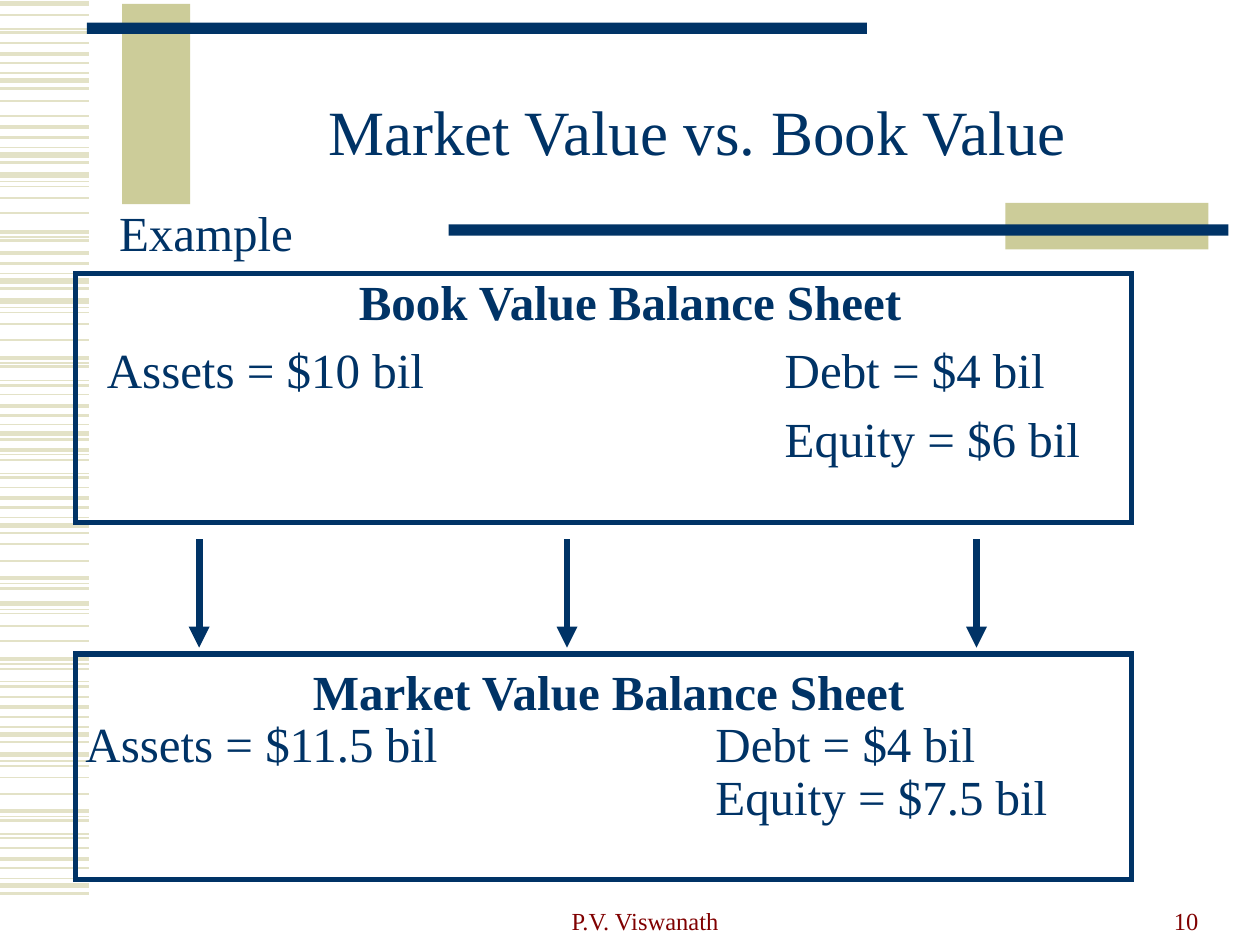
from lxml.etree import SubElement
from pptx import Presentation
from pptx.dml.color import RGBColor
from pptx.enum.shapes import MSO_CONNECTOR, MSO_SHAPE
from pptx.enum.text import MSO_ANCHOR, PP_ALIGN
from pptx.oxml.ns import qn
from pptx.util import Pt

PX = 9144  # EMU per px, 100 px to the inch

THEME = {
    "font": "Times New Roman",
    "navy": RGBColor.from_string("003366"),
    "khaki": RGBColor.from_string("CCCC99"),
    "stripe": RGBColor.from_string("E3E2C7"),
    "maroon": RGBColor.from_string("800000"),
    "title": Pt(36),
    "body": Pt(28),
    "footer": Pt(14),
}

deck = Presentation()
deck.slide_width, deck.slide_height = 1000 * PX, 750 * PX
page = deck.slides.add_slide(deck.slide_layouts[6])


def draw_line(x1, y1, x2, y2, color, weight):
    line = page.shapes.add_connector(
        MSO_CONNECTOR.STRAIGHT, x1 * PX, y1 * PX, x2 * PX, y2 * PX)
    line.line.color.rgb = THEME[color]
    line.line.width = Pt(weight)
    SubElement(line._element.spPr, qn("a:effectLst"))
    return line


def add_text(area, lines, size, color, anchor=MSO_ANCHOR.TOP, **spacing):
    """Add a text box with tabs every 100 px; each line is (text, alignment, bold)."""
    box = page.shapes.add_textbox(*(length * PX for length in area))
    frame = box.text_frame
    frame.word_wrap = True
    frame.vertical_anchor = anchor
    for index, (text, alignment, bold) in enumerate(lines):
        para = frame.add_paragraph() if index else frame.paragraphs[0]
        for name, value in {"alignment": alignment, **spacing}.items():
            setattr(para, name, value)
        para._p.get_or_add_pPr().set("defTabSz", str(100 * PX))
        span = para.add_run()
        span.text = text
        font_format = {"name": THEME["font"], "size": THEME[size], "bold": bold}
        for name, value in font_format.items():
            setattr(span.font, name, value)
        span.font.color.rgb = THEME[color]
    return box


# Stripes down the left edge: heights by line weight
stripes = {
    0.75: [23, 58, 117, 144, 188, 217, 244, 288, 302, 337, 361, 376, 411, 463,
           484, 527, 541, 577, 604, 648, 662, 697],
    1: [34, 80, 92, 148, 157, 169, 248, 257, 270, 313, 387, 432, 445, 487, 497,
        509, 553, 608, 617, 630, 673],
    1.5: [12, 26, 50, 70, 109, 129, 191, 209, 229, 291, 306, 330, 349, 365, 379,
          403, 423, 467, 531, 545, 569, 589, 651, 665, 689, 709],
    2.25: [43, 101, 184, 201, 284, 322, 357, 395, 459, 523, 561, 644, 682],
    3: [3, 64, 123, 139, 223, 239, 344, 417, 479, 583, 599, 703],
}
for weight, heights in stripes.items():
    for y in heights:
        draw_line(0, y, 71, y, "stripe", weight)

# Decorative bars, then the outlined balance sheet frames
rectangles = [
    ((97, 3, 54, 159), "khaki"),
    ((69, 18, 619, 9), "navy"),
    ((798, 161, 161, 37), "khaki"),
    ((356, 178, 619, 9), "navy"),
    ((60, 217, 838, 198), None),
    ((60, 519, 838, 179), None),
]
for area, fill in rectangles:
    block = page.shapes.add_shape(
        MSO_SHAPE.RECTANGLE, *(length * PX for length in area))
    block.shadow.inherit = False
    if fill:
        block.fill.solid()
        block.fill.fore_color.rgb = THEME[fill]
        block.line.fill.background()
    else:
        block.fill.background()
        block.line.color.rgb = THEME["navy"]
        block.line.width = Pt(3)
        SubElement(block.line._get_or_add_ln(), qn("a:miter"), lim="800000")

# Arrows from book values to market values
for x in (158, 450, 775):
    arrow = draw_line(x, 428, x, 514, "navy", 4)
    SubElement(arrow.line._get_or_add_ln(), qn("a:tailEnd"), type="triangle")

add_text((150, 67, 807, 83), [("Market Value vs. Book Value", PP_ALIGN.CENTER, False)],
         "title", "navy", MSO_ANCHOR.MIDDLE, line_spacing=0.85)

book_lines = [
    (" Example", PP_ALIGN.LEFT, False),
    ("Book Value Balance Sheet", PP_ALIGN.CENTER, True),
    ("Assets = $10 bil\t\t\tDebt = $4 bil", PP_ALIGN.LEFT, False),
    ("\t\t\t\t\t\tEquity = $6 bil", PP_ALIGN.LEFT, False),
]
book = add_text((75, 133, 850, 333), book_lines, "body", "navy")
book.text_frame.margin_top = 28 * PX
for index, para in enumerate(book.text_frame.paragraphs):
    para.space_before = Pt(5.5 if index else 0)
    properties = para._p.get_or_add_pPr()
    properties.set("marL", str(38 * PX))
    properties.set("indent", str(-38 * PX))

market_lines = [
    ("Market Value Balance Sheet", PP_ALIGN.CENTER, True),
    ("Assets = $11.5 bil\t\t\tDebt = $4 bil", PP_ALIGN.LEFT, False),
    ("\t\t\t\t\tEquity = $7.5 bil", PP_ALIGN.LEFT, False),
]
add_text((58, 525, 850, 167), market_lines, "body", "navy", line_spacing=0.9)

footers = [
    ((343, 697, 338, 50), "P.V. Viswanath", PP_ALIGN.CENTER),
    ((721, 697, 240, 50), "10", PP_ALIGN.RIGHT),
]
for area, text, alignment in footers:
    add_text(area, [(text, alignment, False)], "footer", "maroon", MSO_ANCHOR.BOTTOM)

deck.save("out.pptx")
